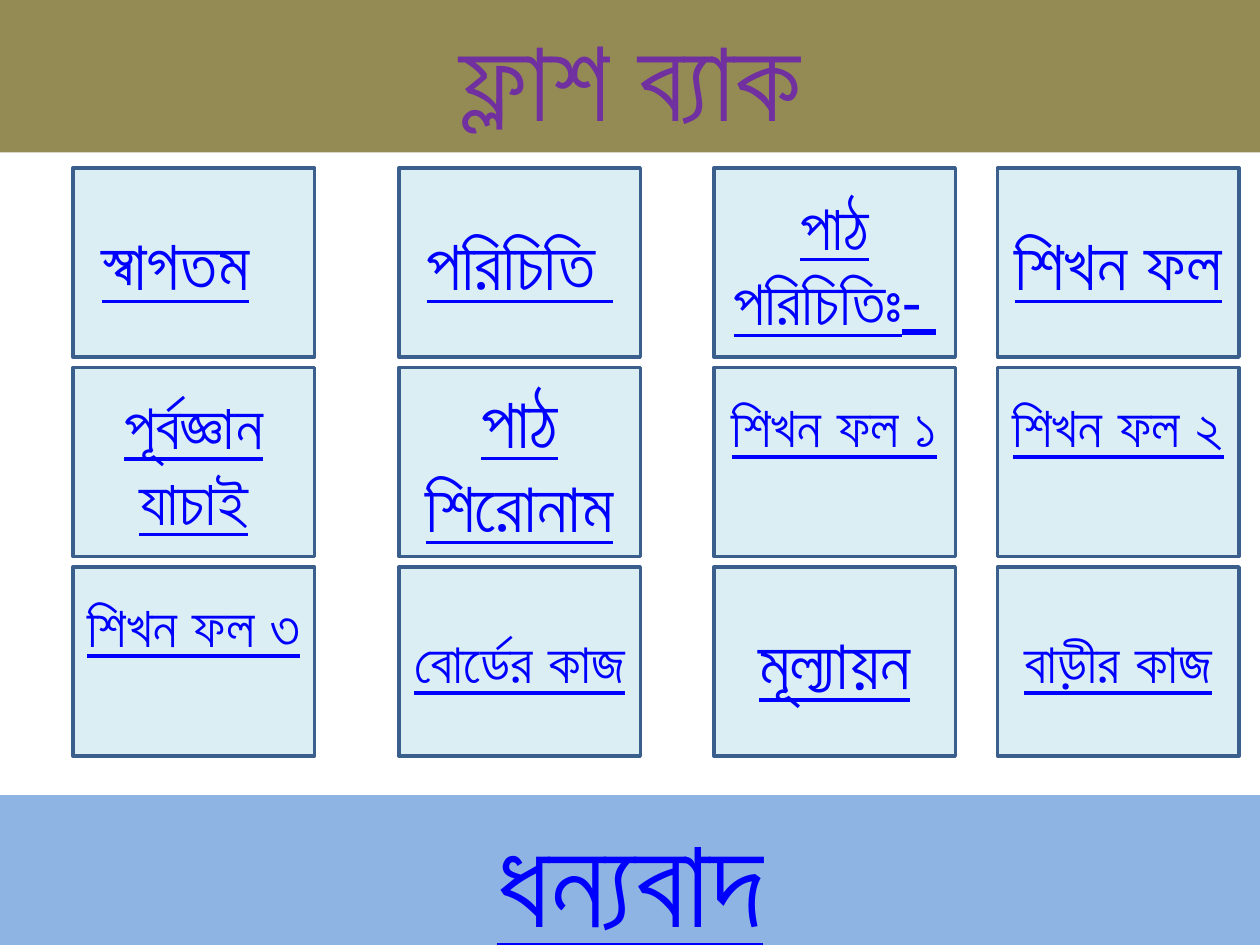
from pptx import Presentation
from pptx.dml.color import RGBColor
from pptx.enum.shapes import MSO_SHAPE
from pptx.enum.text import MSO_ANCHOR, MSO_AUTO_SIZE, PP_ALIGN
from pptx.util import Cm, Pt

# Content: (text, size, format), row by row
TITLE = "ফ্লাশ ব্যাক"
THANKS = "ধন্যবাদ"
BOLD = {"bold": True}
RAISED = {"bold": True, "bottom": 1.6}
CARDS = [
    [("স্বাগতম", 40, {"right": 0.98}), ("পরিচিতি ", 40, {}),
     ("পাঠ পরিচিতিঃ- ", 36, {}), ("শিখন ফল", 40, {})],
    [("পূর্বজ্ঞান যাচাই", 36, {}), ("পাঠ শিরোনাম", 40, {}),
     ("শিখন ফল ১", 32, RAISED), ("শিখন ফল ২", 32, RAISED)],
    [("শিখন ফল ৩", 32, RAISED), ("বোর্ডের কাজ", 32, BOLD),
     ("মূল্যায়ন", 40, {}), ("বাড়ীর কাজ", 32, BOLD)],
]
COLORS = {"olive": "948A54", "purple": "7030A0", "card": "DBEEF4",
          "edge": "3A5F8C", "link": "0000FF", "sky": "8EB4E3"}

# Card grid, in cm
LEFTS = [1.47, 8.04, 14.39, 20.11]
TOP, PITCH = 3.39, 4.02
CARD_W, CARD_H = 4.87, 3.81


def color(name):
    return RGBColor.from_string(COLORS[name])


def write(shape, text, size, ink="link", bold=False, under=True,
          anchor=MSO_ANCHOR.MIDDLE, fit=MSO_AUTO_SIZE.NONE,
          right=0.25, bottom=0.13):
    frame = shape.text_frame
    frame.word_wrap = True
    frame.auto_size = fit
    frame.vertical_anchor = anchor
    frame.margin_left, frame.margin_right = Cm(0.25), Cm(right)
    frame.margin_top, frame.margin_bottom = Cm(0.13), Cm(bottom)
    para = frame.paragraphs[0]
    para.alignment = PP_ALIGN.CENTER
    run = para.add_run()
    run.text = text
    font = run.font
    font.name, font.size = "Calibri", Pt(size)
    font.bold, font.underline = bold, under
    font.color.rgb = color(ink)


def paint(shape, fill, edge=None):
    shape.fill.solid()
    shape.fill.fore_color.rgb = color(fill)
    if edge:
        shape.line.color.rgb = color(edge)
        shape.line.width = Pt(2)
    else:
        shape.line.fill.background()


def add_box(slide, left, top, width, height, fill, edge=None):
    box = slide.shapes.add_shape(MSO_SHAPE.RECTANGLE, Cm(left), Cm(top),
                                 Cm(width), Cm(height))
    box.shadow.inherit = False
    paint(box, fill, edge)
    return box


def main():
    deck = Presentation()
    deck.slide_width, deck.slide_height = Cm(25.4), Cm(19.05)
    slide = deck.slides.add_slide(deck.slide_layouts[5])
    banner = {"anchor": MSO_ANCHOR.TOP, "fit": MSO_AUTO_SIZE.SHAPE_TO_FIT_TEXT}

    # Title banner
    title = slide.shapes.title
    title.left, title.top = Cm(0), Cm(0)
    title.width, title.height = Cm(25.4), Cm(3.07)
    paint(title, "olive")
    write(title, TITLE, 66, ink="purple", under=False, **banner)

    # Topic cards
    for row, cards in enumerate(CARDS):
        for left, (text, size, style) in zip(LEFTS, cards):
            card = add_box(slide, left, TOP + row * PITCH, CARD_W, CARD_H,
                           "card", "edge")
            write(card, text, size, **style)

    # Closing banner
    thanks = add_box(slide, 0, 16.03, 25.4, 3.33, "sky")
    write(thanks, THANKS, 72, bold=True, **banner)

    deck.save("out.pptx")


if __name__ == "__main__":
    main()
